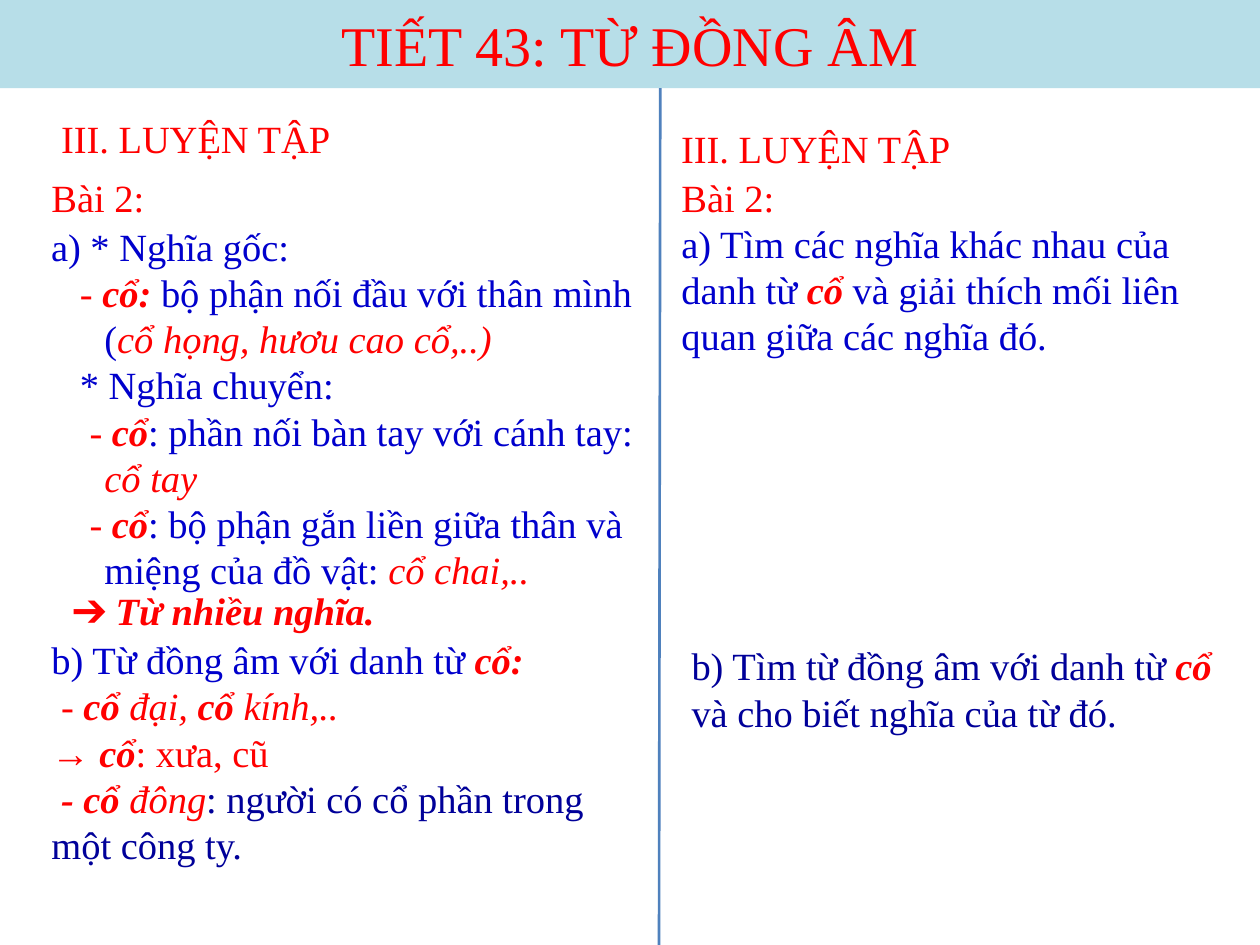
"""Builds the two-column Vietnamese lesson slide on homonyms."""
import lxml.etree
import pptx
import pptx.dml.color
import pptx.enum.shapes
import pptx.enum.text
import pptx.oxml.ns
import pptx.util

Pt = pptx.util.Pt
RGBColor = pptx.dml.color.RGBColor

RED = RGBColor(0xFF, 0x00, 0x00)
BLUE = RGBColor(0x00, 0x00, 0xCC)
NAVY = RGBColor(0x00, 0x00, 0x99)
BANNER_FILL = RGBColor(0xB7, 0xDE, 0xE8)
DIVIDER_COLOR = RGBColor(0x4F, 0x81, 0xBD)

PLAIN_RED = {"color": RED}
PLAIN_BLUE = {"color": BLUE}
PLAIN_NAVY = {"color": NAVY}
EXAMPLE = {"color": RED, "italic": True}
KEYWORD = {"color": RED, "bold": True, "italic": True}

HANGING = 36
SPACE = 5.5


def write(paragraph, text, color=RED, size=22, bold=False, italic=False):
    run = paragraph.add_run()
    run.text = text
    run.font.name = "Times New Roman"
    run.font.size = Pt(size)
    run.font.bold = bold
    run.font.italic = italic
    run.font.color.rgb = color


class LessonSlide:
    def __init__(self, slide):
        self.slide = slide

    def banner(self, left, top, width, height, text):
        banner = self.slide.shapes.add_shape(
            pptx.enum.shapes.MSO_SHAPE.RECTANGLE, Pt(left), Pt(top), Pt(width), Pt(height))
        banner.shadow.inherit = False
        banner.fill.solid()
        banner.fill.fore_color.rgb = BANNER_FILL
        banner.line.fill.background()
        banner.text_frame.vertical_anchor = pptx.enum.text.MSO_ANCHOR.MIDDLE
        title = banner.text_frame.paragraphs[0]
        title.alignment = pptx.enum.text.PP_ALIGN.CENTER
        write(title, text, size=32)

    def divider(self, start, end):
        divider = self.slide.shapes.add_connector(
            pptx.enum.shapes.MSO_CONNECTOR.STRAIGHT, *map(Pt, start + end))
        divider.line.color.rgb = DIVIDER_COLOR
        divider.line.width = Pt(1.5)
        lxml.etree.SubElement(divider._element.spPr, pptx.oxml.ns.qn("a:effectLst"))

    def passage(self, left, top, width, height, *paragraphs, margin=0, wrap=True):
        frame = self.slide.shapes.add_textbox(
            Pt(left), Pt(top), Pt(width), Pt(height)).text_frame
        frame.word_wrap = wrap
        frame.auto_size = pptx.enum.text.MSO_AUTO_SIZE.SHAPE_TO_FIT_TEXT
        for index, (first_line, runs) in enumerate(paragraphs):
            paragraph = frame.add_paragraph() if index else frame.paragraphs[0]
            properties = paragraph._p.get_or_add_pPr()
            properties.set("marL", str(Pt(margin)))
            properties.set("indent", str(Pt(first_line - margin)))
            for text, style in runs:
                write(paragraph, text, **style)


def main():
    presentation = pptx.Presentation()
    presentation.slide_width, presentation.slide_height = Pt(720), Pt(540)
    lesson = LessonSlide(presentation.slides.add_slide(presentation.slide_layouts[6]))

    lesson.banner(0, 0, 720, 50.4, "TIẾT 43: TỪ ĐỒNG ÂM")
    lesson.divider((377.3, 50.4), (376.6, 540))

    section = (SPACE, [("III. LUYỆN TẬP", PLAIN_RED)])
    exercise = (0, [("Bài 2:", PLAIN_RED)])
    for left, top in ((22.3, 62), (376.6, 67.7)):
        lesson.passage(left, top, 196.6, 33.8, section)
    lesson.passage(22.3, 95.8, 73.4, 33.8, exercise)

    lesson.passage(
        382.3, 95.8, 337.7, 113.8,
        exercise,
        (0, [("a) Tìm các nghĩa khác nhau của danh từ ", PLAIN_BLUE), ("cổ ", KEYWORD),
             ("và giải thích mối liên quan giữa các nghĩa đó.", PLAIN_BLUE)]))

    lesson.passage(
        16.6, 123.8, 360, 220.3,
        (SPACE, [("a) * Nghĩa gốc:", PLAIN_BLUE)]),
        (4 * SPACE, [("- ", PLAIN_RED), ("cổ: ", KEYWORD),
                     ("bộ phận nối đầu với thân mình (", PLAIN_BLUE),
                     ("cổ họng, hươu cao cổ,..)", EXAMPLE)]),
        (4 * SPACE, [("* Nghĩa chuyển:", PLAIN_BLUE)]),
        (5 * SPACE, [("- ", PLAIN_RED), ("cổ", KEYWORD),
                     (": phần nối bàn tay với cánh tay: ", PLAIN_BLUE),
                     ("cổ tay", EXAMPLE)]),
        (5 * SPACE, [("- ", PLAIN_RED), ("cổ", KEYWORD),
                     (": bộ phận gắn liền giữa thân và miệng của đồ vật: ", PLAIN_BLUE),
                     ("cổ chai,..", EXAMPLE)]),
        margin=HANGING)

    lesson.passage(
        33.8, 331.9, 193.7, 33.8,
        (0, [("➔ ", EXAMPLE), ("Từ nhiều nghĩa.", KEYWORD)]),
        wrap=False)

    lesson.passage(
        388.1, 363.6, 326.2, 60.5,
        (0, [("b) Tìm từ đồng âm với danh từ ", PLAIN_NAVY), ("cổ ", KEYWORD),
             ("và cho biết nghĩa của từ đó.", PLAIN_NAVY)]))

    lesson.passage(
        22.3, 360, 354.2, 140.4,
        (0, [("b) Từ đồng âm với danh từ ", PLAIN_BLUE), ("cổ:", KEYWORD)]),
        (SPACE, [("- ", PLAIN_RED), ("cổ ", KEYWORD), ("đại, ", EXAMPLE),
                 ("cổ ", KEYWORD), ("kính,..", EXAMPLE)]),
        (0, [("→ ", PLAIN_RED), ("cổ", KEYWORD), (": xưa, cũ", PLAIN_RED)]),
        (SPACE, [("- cổ ", KEYWORD), ("đông", EXAMPLE),
                 (": người có cổ phần trong một công ty.", PLAIN_NAVY)]))

    presentation.save("out.pptx")


if __name__ == "__main__":
    main()
